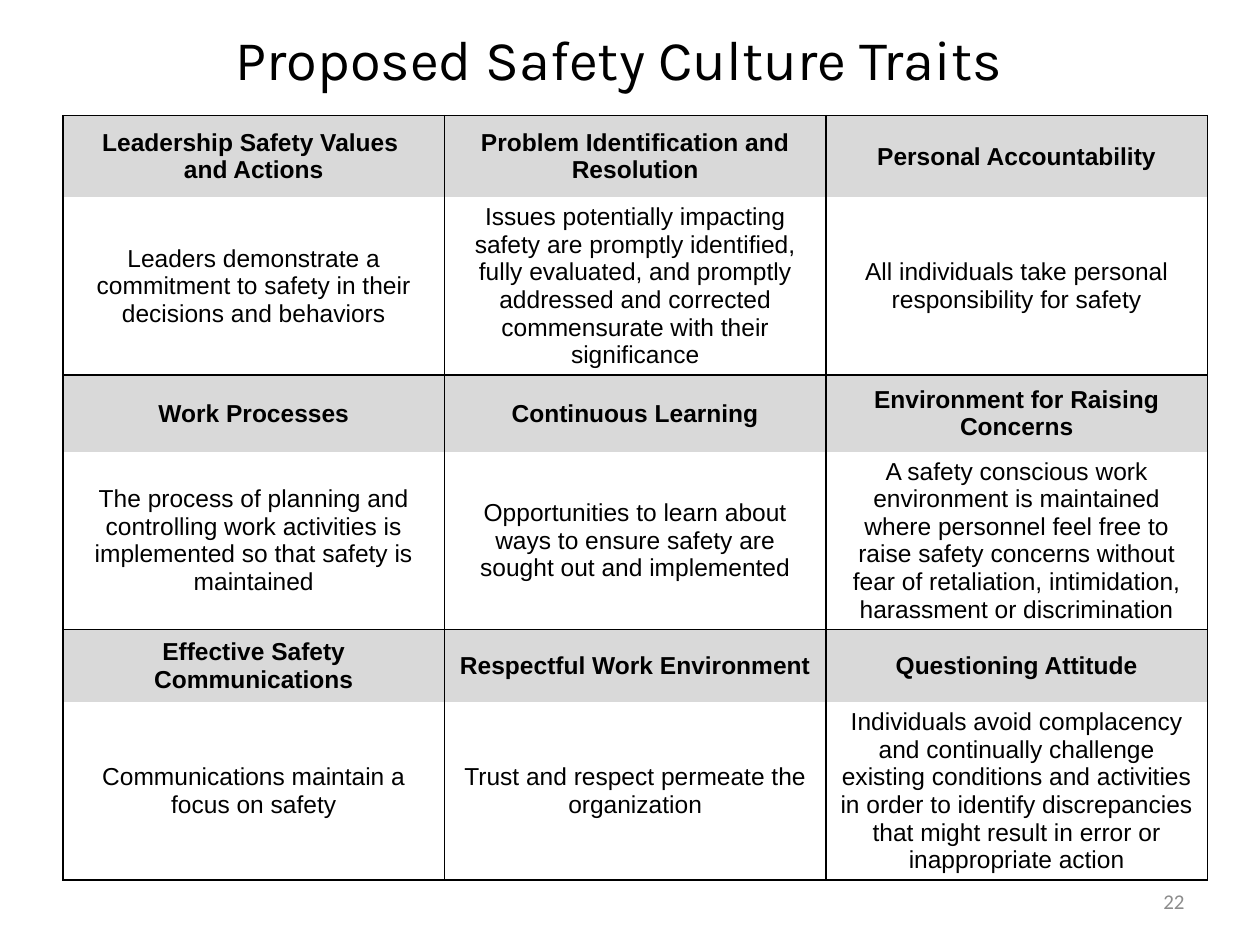
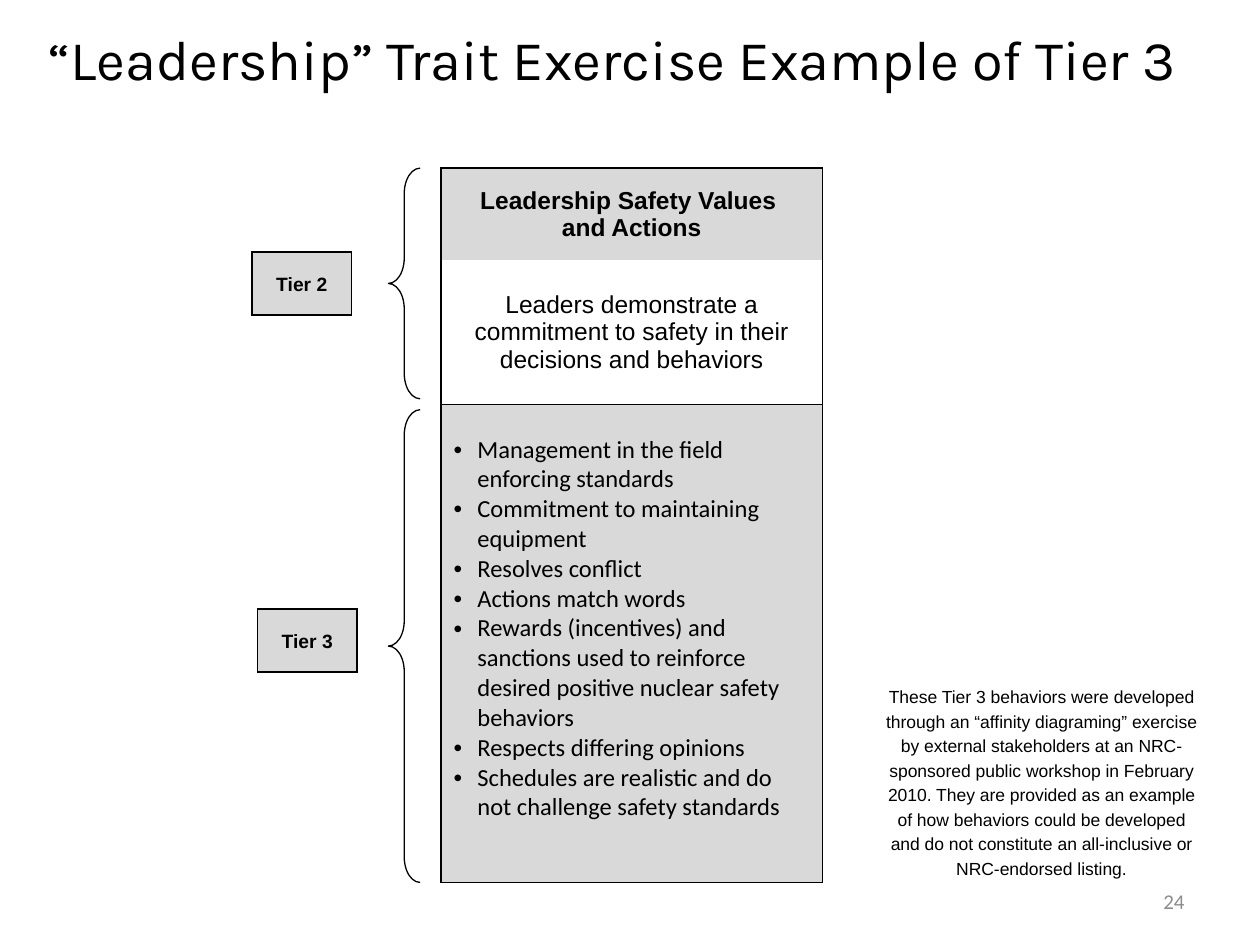
import pptx
import pptx.util
import pptx.dml.color
import pptx.enum.shapes
import pptx.enum.text
import pptx.oxml.ns
import lxml.etree

Cm = pptx.util.Cm
Pt = pptx.util.Pt
SHAPE = pptx.enum.shapes.MSO_SHAPE
ALIGN = pptx.enum.text.PP_ALIGN
MID = pptx.enum.text.MSO_ANCHOR.MIDDLE
TOP = pptx.enum.text.MSO_ANCHOR.TOP

HUES = {"ink": "000000", "band": "D9D9D9", "page": "8C8C8C"}
HEAD = {"name": "Arial", "size": Pt(14), "bold": True}
BODY = {"name": "Arial", "size": Pt(14), "bold": False}
LIST = {"name": "Calibri", "size": Pt(14), "bold": False}
NAME = {"name": "Karla", "size": Pt(32)}
PAGE = {"name": "Calibri", "size": Pt(12)}
TAG = {"name": "Arial", "size": Pt(11), "bold": True}
NOTE = {"name": "Arial", "size": Pt(10)}

COL = 7.69
LEAD = (
    "Leadership Safety Values \nand Actions",
    "Leaders demonstrate a commitment to safety in their decisions and behaviors",
)
TRAITS = [
    [
        LEAD,
        ("Problem Identification and Resolution",
         "Issues potentially impacting safety are promptly identified, fully evaluated, "
         "and promptly addressed and corrected commensurate with their significance"),
        ("Personal Accountability",
         "All individuals take personal responsibility for safety"),
    ],
    [
        ("Work Processes",
         "The process of planning and controlling work activities is implemented "
         "so that safety is maintained"),
        ("Continuous Learning",
         "Opportunities to learn about ways to ensure safety are sought out and implemented"),
        ("Environment for Raising Concerns",
         "A safety conscious work environment is maintained where personnel feel free to "
         "raise safety concerns without fear of retaliation, intimidation, harassment "
         "or discrimination"),
    ],
    [
        ("Effective Safety Communications",
         "Communications maintain a focus on safety"),
        ("Respectful Work Environment",
         "Trust and respect permeate the organization"),
        ("Questioning Attitude",
         "Individuals avoid complacency and continually challenge existing conditions and "
         "activities in order to identify discrepancies that might result in error or "
         "inappropriate action"),
    ],
]
ACTS = [
    "Management in the field enforcing standards",
    "Commitment to maintaining equipment",
    "Resolves conflict",
    "Actions match words",
    "Rewards (incentives) and sanctions used to reinforce desired positive "
    "nuclear safety behaviors",
    "Respects differing opinions",
    "Schedules are realistic and do not challenge safety standards",
]
ORIGIN = (
    "These Tier 3 behaviors were developed through an “affinity diagraming” exercise by "
    "external stakeholders at an NRC-sponsored public workshop in February 2010. They are "
    "provided as an example of how behaviors could be developed and do not constitute an "
    "all-inclusive or NRC-endorsed listing."
)


def tint(hue):
    return pptx.dml.color.RGBColor.from_string(HUES[hue])


def add_tag(base, tag, **attrs):
    return lxml.etree.SubElement(base, pptx.oxml.ns.qn(tag), attrs)


def write(frame, lines, form, align=ALIGN.CENTER, hue="ink", mark=None, lead=None):
    for i, line in enumerate(lines):
        para = frame.paragraphs[0] if i == 0 else frame.add_paragraph()
        para.text = line
        para.alignment = align
        if lead:
            para.line_spacing = lead
        if mark:
            props = para._p.get_or_add_pPr()
            props.set("marL", str(Cm(0.48)))
            props.set("indent", str(-Cm(0.48)))
            add_tag(props, "a:buFont", typeface="Arial")
            add_tag(props, "a:buChar", char=mark)
        for key, value in form.items():
            setattr(para.font, key, value)
        para.font.color.rgb = tint(hue)


def add_text(slide, box, text, form, anchor=MID, **opts):
    frame = slide.shapes.add_textbox(*map(Cm, box)).text_frame
    frame.word_wrap = True
    frame.vertical_anchor = anchor
    write(frame, [text], form, **opts)


def add_grid(slide, box, cols, rows):
    left, top, width, height = box
    shape = slide.shapes.add_table(len(rows), cols, *map(Cm, box))
    grid = shape.table
    grid.first_row = grid.horz_banding = False
    for col in grid.columns:
        col.width = Cm(width / cols)
    for row, size in zip(grid.rows, rows):
        row.height = Cm(size)
    return grid


def fill_cell(cell, lines, form, edges, band, foot=0, **opts):
    props = cell._tc.get_or_add_tcPr()
    for side in "LRTB":
        line = add_tag(props, "a:ln" + side, w=str(Pt(1)))
        if side in edges:
            paint = add_tag(line, "a:solidFill")
            add_tag(paint, "a:srgbClr", val=HUES["ink"])
        else:
            add_tag(line, "a:noFill")
    if band:
        cell.fill.solid()
        cell.fill.fore_color.rgb = tint("band")
    else:
        cell.fill.background()
    cell.vertical_anchor = MID
    cell.margin_top, cell.margin_bottom = 0, Cm(foot)
    write(cell.text_frame, lines, form, **opts)


def fill_trait(grid, row, col, trait):
    head, body = trait
    fill_cell(grid.cell(row, col), head.split("\n"), HEAD, "LRT", True)
    fill_cell(grid.cell(row + 1, col), [body], BODY, "LRB", False)


def add_shape(slide, kind, box):
    shape = slide.shapes.add_shape(kind, *map(Cm, box))
    shape.shadow.inherit = False
    shape.line.color.rgb = tint("ink")
    shape.line.width = Pt(0.75)
    return shape


def add_tier(slide, box, text, inset, drop):
    left, top, width, height = box
    brace = add_shape(slide, SHAPE.LEFT_BRACE, (left + width - 0.64, top, 0.64, height))
    brace.fill.background()
    brace.adjustments[0] = 0.8
    label = add_shape(slide, SHAPE.RECTANGLE, (left + inset, top + drop, 2.01, 1.27))
    add_tag(label.line._get_or_add_ln(), "a:miter", lim="800000")
    label.fill.solid()
    label.fill.fore_color.rgb = tint("band")
    label.text_frame.vertical_anchor = MID
    write(label.text_frame, [text], TAG)


def add_slide(deck, title, page):
    slide = deck.slides.add_slide(deck.slide_layouts[6])
    add_text(slide, (0, 0, 24.97, 2.33), title, NAME)
    add_text(slide, (18.2, 17.65, 5.93, 1.02), str(page), PAGE,
             align=ALIGN.RIGHT, hue="page")
    return slide


def show_traits(slide, box):
    rows = [1.65, 3.58, 1.55, 3.58, 1.47, 3.58]
    grid = add_grid(slide, box, 3, rows)
    for i, group in enumerate(TRAITS):
        for col, trait in enumerate(group):
            fill_trait(grid, 2 * i, col, trait)


def show_tiers(slide, box):
    left, top, width, height = box
    grid = add_grid(slide, (left + 3.81, top, COL, height), 1, [1.86, 2.9, 9.64])
    fill_trait(grid, 0, 0, LEAD)
    fill_cell(grid.cell(2, 0), ACTS, LIST, "LRTB", True, foot=0.6,
              align=ALIGN.LEFT, mark="•")
    add_tier(slide, (left, top, 3.39, 4.65), "Tier 2", 0, 1.69)
    add_tier(slide, (left, top + 4.87, 3.39, 9.53), "Tier 3", 0.11, 4.02)
    add_text(slide, (left + width - 6.93, top + 10.25, 6.93, 4.24), ORIGIN, NOTE,
             anchor=TOP, lead=Pt(14))


def main():
    deck = pptx.Presentation()
    deck.slide_width, deck.slide_height = Cm(25.4), Cm(19.05)
    show_traits(add_slide(deck, "Proposed Safety Culture Traits", 22),
                (1.27, 2.33, 3 * COL, 15.41))
    show_tiers(add_slide(deck, "“Leadership” Trait Exercise Example of Tier 3 ", 24),
               (5.08, 3.39, 19.38, 14.4))
    deck.save("out.pptx")


if __name__ == "__main__":
    main()
